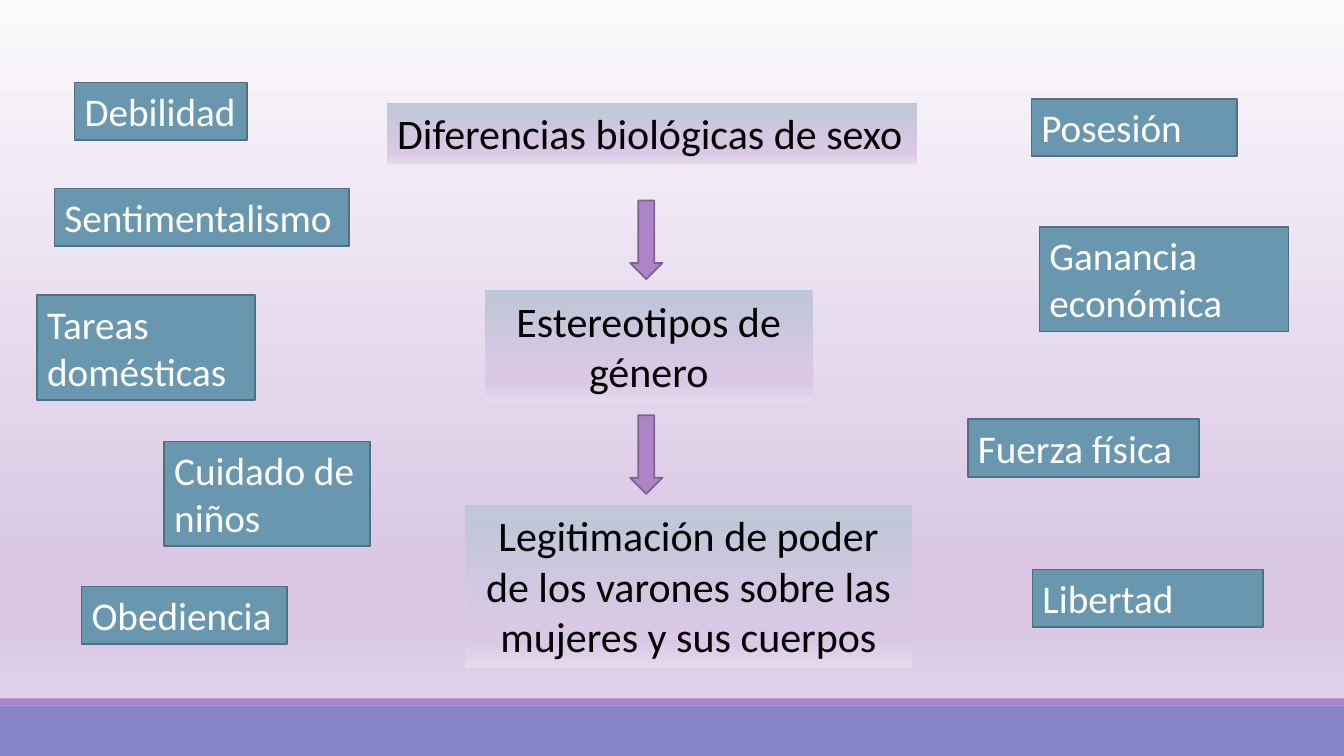
import pptx
import pptx.dml.color
import pptx.enum.shapes
import pptx.enum.text
import pptx.oxml.ns
import pptx.util
from lxml import etree

Inches = pptx.util.Inches
Pt = pptx.util.Pt
qn = pptx.oxml.ns.qn
MSO_SHAPE = pptx.enum.shapes.MSO_SHAPE
PP_ALIGN = pptx.enum.text.PP_ALIGN


def color(hex_text):
    return pptx.dml.color.RGBColor.from_string(hex_text)


def fill_gradient(fill, element, top_color):
    """Vertical four-stop gradient from top_color to lilac."""
    fill.gradient()
    fill.gradient_angle = 270
    stops = element.find(".//" + qn("a:gsLst"))
    for stop in list(stops):
        stops.remove(stop)
    for percent, hex_text in [(0, top_color), (74, "DAC8E5"),
                              (83, "DAC8E5"), (100, "E6DAEE")]:
        stop = etree.SubElement(stops, qn("a:gs"), pos=str(percent * 1000))
        etree.SubElement(stop, qn("a:srgbClr"), val=hex_text)


deck = pptx.Presentation()
deck.slide_width = Inches(13.33)
deck.slide_height = Inches(7.5)
slide = deck.slides.add_slide(deck.slide_layouts[6])
fill_gradient(slide.background.fill, slide.element, "FBF9FC")

# Footer bands and the arrows between the central ideas
RECTANGLE, ARROW = MSO_SHAPE.RECTANGLE, MSO_SHAPE.DOWN_ARROW
for kind, left, top, width, height, fill_hex in [
    (RECTANGLE, 0, 7, 13.33, 0.5, "8784C7"),
    (RECTANGLE, 0, 6.93, 13.33, 0.07, "AD84C6"),
    (ARROW, 6.25, 1.99, 0.32, 0.78, "AD84C6"),
    (ARROW, 6.25, 4.12, 0.32, 0.78, "AD84C6"),
]:
    shape = slide.shapes.add_shape(
        kind, Inches(left), Inches(top), Inches(width), Inches(height))
    shape.shadow.inherit = False
    shape.fill.solid()
    shape.fill.fore_color.rgb = color(fill_hex)
    if kind == ARROW:
        shape.line.color.rgb = color("806292")
        shape.line.width = Pt(1.25)
    else:
        shape.line.fill.background()

# Text boxes: central chain of ideas, then the traits on each side
central_ideas = [
    ("Diferencias biológicas de sexo", 3.84, 1.02, 5.26, 0.61),
    ("Estereotipos de género", 4.81, 2.88, 3.25, 1.11),
    ("Legitimación de poder de los varones sobre las mujeres y sus cuerpos",
     4.61, 5.01, 4.44, 1.62),
]
traits = [
    ("Debilidad", 0.74, 0.82, 1.71, 0.57),
    ("Sentimentalismo", 0.54, 1.87, 2.92, 0.57),
    ("Tareas domésticas", 0.37, 2.93, 2.16, 1.04),
    ("Cuidado de niños", 1.63, 4.38, 2.04, 1.04),
    ("Obediencia", 0.81, 5.82, 2.04, 0.57),
    ("Posesión", 10.31 - 0.08, 0.98, 2.04, 0.57),
    ("Ganancia económica", 10.31, 2.25, 2.47, 1.04),
    ("Fuerza física", 9.6, 4.16, 2.29, 0.57),
    ("Libertad", 10.24, 5.65, 2.29, 0.57),
]
unwrapped = {"Diferencias biológicas de sexo", "Debilidad"}

for entry in central_ideas + traits:
    text, left, top, width, height = entry
    is_central = entry in central_ideas
    box = slide.shapes.add_textbox(
        Inches(left), Inches(top), Inches(width), Inches(height))
    frame = box.text_frame
    frame.word_wrap = text not in unwrapped
    frame.text = text
    para = frame.paragraphs[0]
    centered = is_central and frame.word_wrap
    para.alignment = PP_ALIGN.CENTER if centered else PP_ALIGN.LEFT
    font = para.runs[0].font
    font.name = "Calibri"
    font.size = Pt(30 if is_central else 28)
    font.color.rgb = color("000000" if is_central else "FFFFFF")
    if is_central:
        fill_gradient(box.fill, box.element, "BDC7D7")
    else:
        box.fill.solid()
        box.fill.fore_color.rgb = color("6997AF")
        box.line.color.rgb = color("4E7081")
        box.line.width = Pt(1.25)

deck.save("out.pptx")
